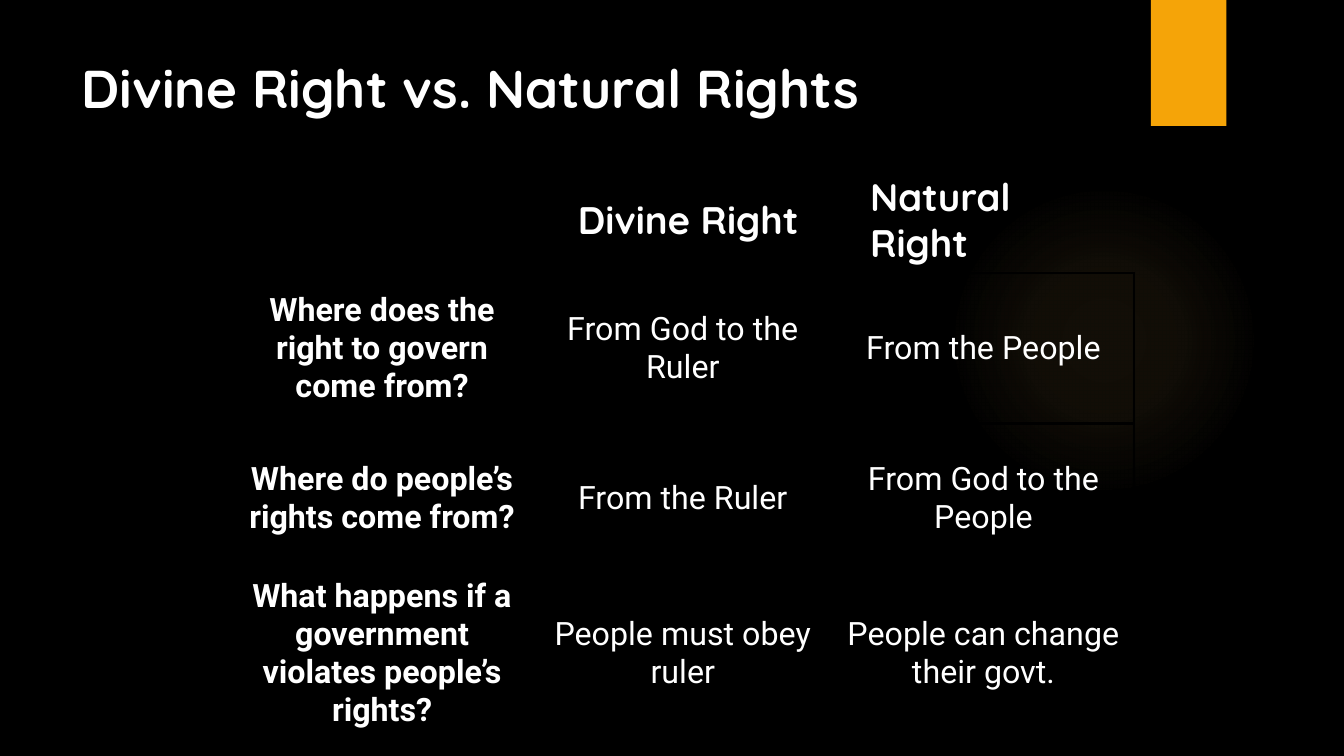
from lxml import etree
from pptx import Presentation, util as u
from pptx.dml import color
from pptx.enum import shapes, text
from pptx.oxml import ns

HEAD, BODY = "Quicksand", "Roboto"
BLACK, WHITE, AMBER, GLOW = "000000", "FFFFFF", "F5A408", "FAC96A"
COLS, ROWS = 160, 90

QUESTIONS = [
    ("Where does the right to govern come from?",
     "From God to the Ruler", "From the People"),
    ("Where do people’s rights come from?",
     "From the Ruler", "From God to the People"),
    ("What happens if a government violates people’s rights?",
     "People must obey ruler", "People can change their govt."),
]


def rgb(code):
    return color.RGBColor.from_string(code)


def node(parent, tag, **attrs):
    """Append a DrawingML element and return it."""
    item = etree.SubElement(parent, ns.qn("a:" + tag))
    for key, value in attrs.items():
        item.set(key, str(value))
    return item


class Deck:
    """Style and current slide; lengths are columns and rows of a grid."""

    def __init__(self):
        self.prs = Presentation()
        self.prs.slide_width = u.Inches(13.33)
        self.prs.slide_height = u.Inches(7.5)
        self.slide = self.prs.slides.add_slide(self.prs.slide_layouts[5])
        fill = self.slide.background.fill
        fill.solid()
        fill.fore_color.rgb = rgb(BLACK)

    def x(self, cols):
        return int(self.prs.slide_width * cols / COLS)

    def y(self, rows):
        return int(self.prs.slide_height * rows / ROWS)

    def box(self, left, top, wide, high):
        return self.x(left), self.y(top), self.x(wide), self.y(high)

    def add_run(self, para, words, size, face, bold=True,
                align=text.PP_ALIGN.LEFT):
        para.alignment = align
        run = para.add_run()
        run.text = words
        font = run.font
        font.size, font.name, font.bold = u.Pt(size), face, bold
        font.color.rgb = rgb(WHITE)

    def shape(self, kind, *place):
        item = self.slide.shapes.add_shape(kind, *self.box(*place))
        item.shadow.inherit = False
        item.line.fill.background()
        return item

    def block(self, fill, *place):
        item = self.shape(shapes.MSO_SHAPE.RECTANGLE, *place)
        item.fill.solid()
        item.fill.fore_color.rgb = rgb(fill)

    def glow(self, tint, stops, *place):
        """Draw a disc that fades outward; stops are (place, opacity) in %."""
        item = self.shape(shapes.MSO_SHAPE.OVAL, *place)
        item.fill.background()
        old = item._element.spPr.find(ns.qn("a:noFill"))
        grad = etree.Element(ns.qn("a:gradFill"))
        marks = node(grad, "gsLst")
        for pos, alpha in stops:
            stop = node(marks, "gs", pos=pos * 1000)
            node(node(stop, "srgbClr", val=tint), "alpha", val=alpha * 1000)
        ring = node(grad, "path", path="circle")
        node(ring, "fillToRect", l=50000, t=50000, r=50000, b=50000)
        old.getparent().replace(old, grad)

    def title(self, words, *place):
        item = self.slide.shapes.title
        item.left, item.top, item.width, item.height = self.box(*place)
        frame = item.text_frame
        frame.auto_size = text.MSO_AUTO_SIZE.NONE
        frame.vertical_anchor = text.MSO_ANCHOR.TOP
        self.add_run(frame.paragraphs[0], words, 38, HEAD)

    def label(self, words, *place):
        frame = self.slide.shapes.add_textbox(*self.box(*place)).text_frame
        frame.word_wrap = True
        frame.vertical_anchor = text.MSO_ANCHOR.MIDDLE
        frame.margin_left = frame.margin_right = 0
        frame.margin_top = frame.margin_bottom = 0
        self.add_run(frame.paragraphs[0], words, 27.4, HEAD)

    def cell(self, cell, words, bold):
        cell.margin_left = cell.margin_right = u.Inches(0.04)
        cell.margin_top = cell.margin_bottom = u.Inches(0.04)
        cell.vertical_anchor = text.MSO_ANCHOR.MIDDLE
        props = cell._tc.get_or_add_tcPr()
        for side in ("lnL", "lnR", "lnT", "lnB"):
            edge = node(props, side, w=u.Pt(2))
            node(node(edge, "solidFill"), "srgbClr", val=BLACK)
        cell.fill.background()
        self.add_run(cell.text_frame.paragraphs[0], words, 23, BODY, bold,
                     text.PP_ALIGN.CENTER)

    def table(self, data, left, top, wide, highs):
        count = len(data[0])
        place = self.box(left, top, wide * count, sum(highs))
        grid = self.slide.shapes.add_table(len(data), count, *place).table
        grid.first_row = grid.horz_banding = False
        for col in grid.columns:
            col.width = self.x(wide)
        for i, (line, high) in enumerate(zip(data, highs)):
            grid.rows[i].height = self.y(high)
            for j, words in enumerate(line):
                self.cell(grid.cell(i, j), words, bold=j == 0)


def main():
    deck = Deck()
    deck.glow(GLOW, [(0, 7), (36, 6), (69, 0)], 112.95, 22, 37, 37)
    deck.block(AMBER, 137, 0, 9, 15)
    deck.title("Divine Right vs. Natural Rights", 8.5, 6, 123.5, 18.4)
    deck.table(QUESTIONS, 27.6, 32.5, 35.8, [17.9, 17.9, 19])
    deck.label("Divine Right", 68.8, 23.3, 27, 5.5)
    deck.label("Natural Right", 103.6, 23.3, 27, 5.5)
    deck.prs.save("out.pptx")


if __name__ == "__main__":
    main()
